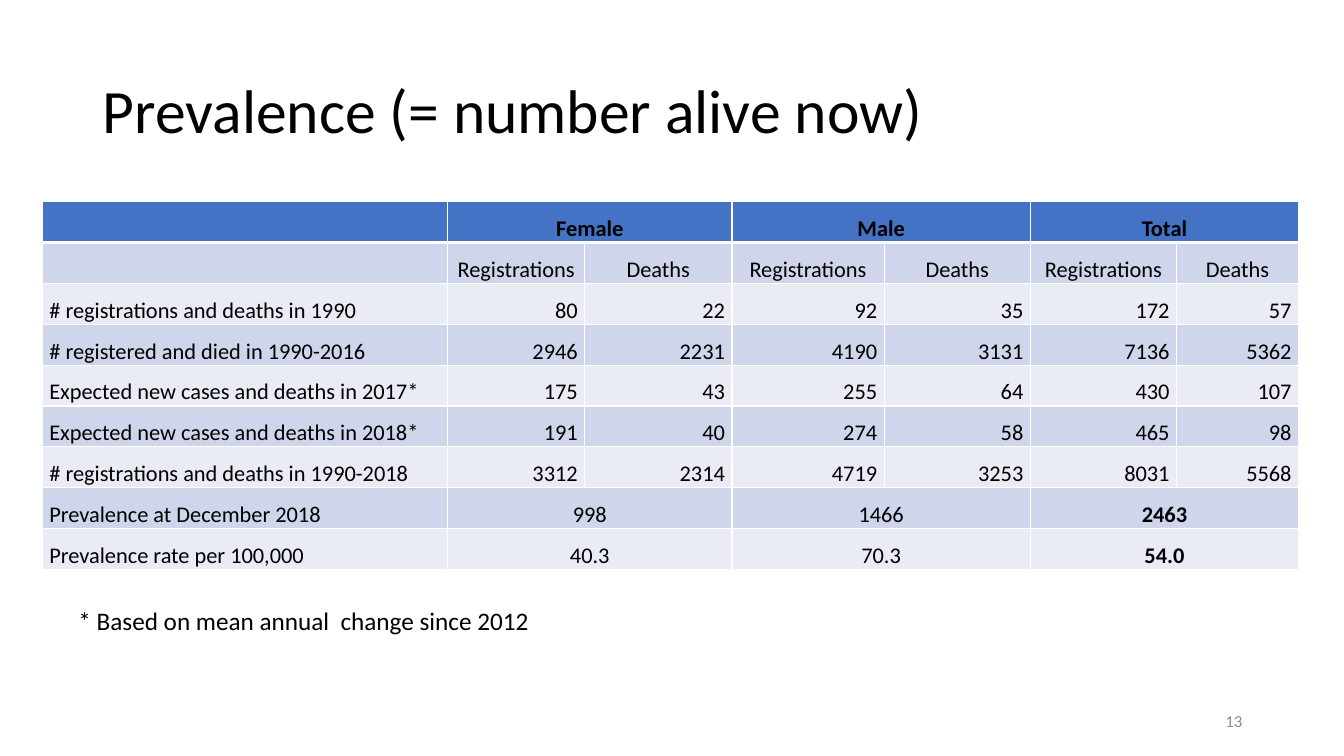
import pptx
import pptx.dml.color
import pptx.enum.text
import pptx.oxml
import pptx.oxml.ns
import pptx.util
from pptx.util import Inches

ALIGN = pptx.enum.text.PP_ALIGN
ANCHOR = pptx.enum.text.MSO_ANCHOR
AUTO_SIZE = pptx.enum.text.MSO_AUTO_SIZE

COLORS = {
    "text": "000000",
    "number": "8C8C8C",
    "header": "4472C4",
    "dark_band": "CFD5EA",
    "light_band": "E9EBF5",
    "border": "FFFFFF",
}
COLUMN_WIDTHS = [4.02, 1.36, 1.46, 1.51, 1.45, 1.45, 1.21]
TABLE_HEIGHT = 3.65
GROUP_ROWS = (0, 7, 8)
ROWS = [
    ["", "Female", "Male", "Total"],
    [""] + ["Registrations", "Deaths"] * 3,
    ["# registrations and deaths in 1990", "80", "22", "92", "35", "172", "57"],
    ["# registered and died in 1990-2016", "2946", "2231", "4190", "3131", "7136", "5362"],
    ["Expected new cases and deaths in 2017*", "175", "43", "255", "64", "430", "107"],
    ["Expected new cases and deaths in 2018*", "191", "40", "274", "58", "465", "98"],
    ["# registrations and deaths in 1990-2018", "3312", "2314", "4719", "3253", "8031", "5568"],
    ["Prevalence at December 2018", "998", "1466", "2463"],
    ["Prevalence rate per 100,000", "40.3", "70.3", "54.0"],
]


def set_all(obj, values):
    for name, value in values.items():
        setattr(obj, name, value)


def rgb(name):
    return pptx.dml.color.RGBColor.from_string(COLORS[name])


def write(tf, text, size, color="text", bold=False, **paragraph):
    p = tf.paragraphs[0]
    set_all(p, paragraph)
    if not text:
        p.font.size = pptx.util.Pt(size)
        return
    r = p.add_run()
    r.text = text
    set_all(r.font, {"name": "Calibri", "size": pptx.util.Pt(size), "bold": bold})
    r.font.color.rgb = rgb(color)


def add_title(s, text):
    sp = s.shapes.title
    set_all(sp, {"left": Inches(0.92), "top": Inches(0.4),
                 "width": Inches(11.5), "height": Inches(1.45)})
    set_all(sp.text_frame, {"vertical_anchor": ANCHOR.MIDDLE, "auto_size": AUTO_SIZE.NONE})
    write(sp.text_frame, text, 44, alignment=ALIGN.LEFT, line_spacing=0.9)


def add_text(s, box, text, size, color, frame, align):
    sp = s.shapes.add_textbox(*[Inches(v) for v in box])
    set_all(sp.text_frame, frame)
    write(sp.text_frame, text, size, color, alignment=align)


def set_borders(cell, top, bottom):
    tc_pr = cell._tc.get_or_add_tcPr()
    for side, points in (("L", 1), ("R", 1), ("T", top), ("B", bottom)):
        tc_pr.append(pptx.oxml.parse_xml(
            f'<a:ln{side} {pptx.oxml.ns.nsdecls("a")} w="{pptx.util.Pt(points)}">'
            f'<a:solidFill><a:srgbClr val="{COLORS["border"]}"/></a:solidFill>'
            f'</a:ln{side}>'))


def format_cell(cell, row):
    set_all(cell, {"margin_left": Inches(0.07), "margin_right": Inches(0.07),
                   "margin_top": 0, "margin_bottom": 0,
                   "vertical_anchor": ANCHOR.BOTTOM})
    set_borders(cell, 3 if row == 1 else 1, 3 if row == 0 else 1)
    band = "header" if row == 0 else "dark_band" if row % 2 else "light_band"
    cell.fill.solid()
    cell.fill.fore_color.rgb = rgb(band)


def add_prevalence_table(s):
    frame = s.shapes.add_table(len(ROWS), len(COLUMN_WIDTHS), Inches(0.42), Inches(2),
                               Inches(sum(COLUMN_WIDTHS)), Inches(TABLE_HEIGHT))
    table = frame.table
    set_all(table, {"first_row": False, "horz_banding": False})
    for column, width in zip(table.columns, COLUMN_WIDTHS):
        column.width = Inches(width)
    for i, texts in enumerate(ROWS):
        table.rows[i].height = Inches(TABLE_HEIGHT / len(ROWS))
        for cell in table.rows[i].cells:
            format_cell(cell, i)
        grouped = i in GROUP_ROWS
        for j, text in enumerate(texts):
            col = 2 * j - 1 if grouped and j else j
            cell = table.cell(i, col)
            if grouped and j:
                cell.merge(table.cell(i, col + 1))
            centred = grouped or i == 1
            align = ALIGN.LEFT if j == 0 else ALIGN.CENTER if centred else ALIGN.RIGHT
            bold = i == 0 or (grouped and j == 3)
            write(cell.text_frame, text, 16, bold=bold, alignment=align, line_spacing=1.07)


def main():
    prs = pptx.Presentation()
    set_all(prs, {"slide_width": Inches(13.33), "slide_height": Inches(7.5)})
    s = prs.slides.add_slide(prs.slide_layouts[5])
    add_title(s, "Prevalence (= number alive now)")
    add_prevalence_table(s)
    add_text(s, (9.42, 6.95, 3, 0.4), "13", 12, "number",
             {"word_wrap": True, "vertical_anchor": ANCHOR.MIDDLE}, ALIGN.RIGHT)
    add_text(s, (0.68, 5.96, 4.73, 0.4), "* Based on mean annual  change since 2012", 18, "text",
             {"word_wrap": False, "auto_size": AUTO_SIZE.SHAPE_TO_FIT_TEXT}, ALIGN.LEFT)
    prs.save("out.pptx")


if __name__ == "__main__":
    main()
